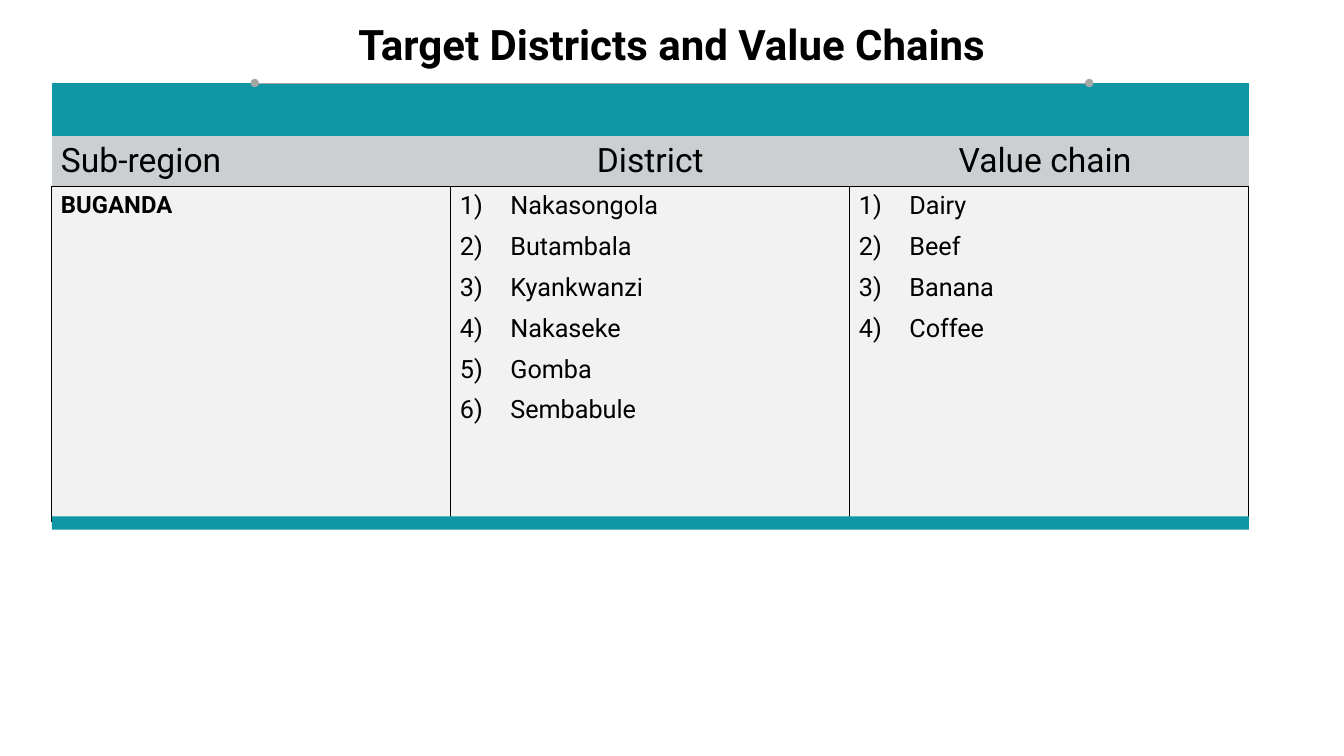
from pptx import Presentation
from pptx.dml.color import RGBColor
from pptx.enum.shapes import MSO_CONNECTOR as CONN, MSO_SHAPE as SHAPE
from pptx.enum.text import MSO_ANCHOR as ANCHOR, PP_ALIGN as ALIGN
from pptx.oxml.ns import qn
from pptx.util import Pt
from lxml.etree import SubElement

FONT = "Roboto"
BLACK, TEAL, SILVER, PALE, GREY = "000000", "0F97A6", "CCCFD1", "F2F2F2", "A6A6A6"
LEFT, TOP, COL_W = 37, 59.3, 285
ROW_HEIGHTS = (38, 36, 239)
HEADINGS = (
    ("Sub-region", ALIGN.LEFT),
    ("District", ALIGN.CENTER),
    ("Value chain ", ALIGN.CENTER),
)
DISTRICTS = ("Nakasongola", "Butambala", "Kyankwanzi", "Nakaseke", "Gomba", "Sembabule")
VALUE_CHAINS = ("Dairy", "Beef", "Banana", "Coffee")


def color(value):
    """Turn a hex string into a colour."""
    return RGBColor.from_string(value)


def write(p, text, size, bold=False, align=ALIGN.LEFT):
    """Put one formatted run in a paragraph."""
    p.alignment = align
    r = p.add_run()
    r.text = text
    for name, value in {"name": FONT, "size": Pt(size), "bold": bold}.items():
        setattr(r.font, name, value)
    r.font.color.rgb = color(BLACK)


def write_numbered(tf, items):
    """Fill a text frame with a numbered list."""
    for i, item in enumerate(items):
        p = tf.paragraphs[0] if i == 0 else tf.add_paragraph()
        write(p, item, 18)
        p.space_after = Pt(8)
        pPr = p._p.get_or_add_pPr()
        pPr.set("marL", str(Pt(36)))
        pPr.set("indent", str(-Pt(36)))
        SubElement(pPr, qn("a:buFont"), typeface="+mj-lt")
        SubElement(pPr, qn("a:buAutoNum"), type="arabicParenR")


def format_cell(cell, fill, lined_sides=""):
    """Set the margins, borders and fill of a cell."""
    margins = {"margin_left": 6.6, "margin_right": 6.6, "margin_top": 3.6, "margin_bottom": 3.6}
    for name, value in margins.items():
        setattr(cell, name, Pt(value))
    tcPr = cell._tc.get_or_add_tcPr()
    for side in "LRTB":
        ln = SubElement(tcPr, qn(f"a:ln{side}"), w=str(Pt(1)))
        if side in lined_sides:
            solid = SubElement(ln, qn("a:solidFill"))
            SubElement(solid, qn("a:srgbClr"), val=BLACK)
        else:
            SubElement(ln, qn("a:noFill"))
    cell.fill.solid()
    cell.fill.fore_color.rgb = color(fill)


def add_district_table(s):
    """Add the table of districts and value chains."""
    frame = s.shapes.add_table(3, 3, Pt(LEFT), Pt(TOP), Pt(3 * COL_W), Pt(sum(ROW_HEIGHTS)))
    table = frame.table
    for col in table.columns:
        col.width = Pt(COL_W)
    for row, height in zip(table.rows, ROW_HEIGHTS):
        row.height = Pt(height)
    for i, (heading, align) in enumerate(HEADINGS):
        format_cell(table.cell(0, i), TEAL)
        cell = table.cell(1, i)
        format_cell(cell, SILVER, "B")
        cell.vertical_anchor = ANCHOR.MIDDLE
        write(cell.text_frame.paragraphs[0], heading, 24, align=align)
        format_cell(table.cell(2, i), PALE, "LRTB")
    table.cell(0, 0).merge(table.cell(0, 2))
    write(table.cell(2, 0).text_frame.paragraphs[0], "BUGANDA", 17, True)
    write_numbered(table.cell(2, 1).text_frame, DISTRICTS)
    write_numbered(table.cell(2, 2).text_frame, VALUE_CHAINS)


def add_title(s, text):
    """Add the centred title across the slide."""
    tf = s.shapes.add_textbox(0, Pt(10), Pt(960), Pt(44)).text_frame
    tf.word_wrap = True
    write(tf.paragraphs[0], text, 30, True, ALIGN.CENTER)


def add_dotted_end_line(s, x1, x2, y):
    """Add a thin horizontal line with round ends."""
    line = s.shapes.add_connector(CONN.STRAIGHT, Pt(x1), Pt(y), Pt(x2), Pt(y))
    line.line.color.rgb = color(GREY)
    line.line.width = Pt(0.5)
    ln = line.line._get_or_add_ln()
    for end in ("headEnd", "tailEnd"):
        SubElement(ln, qn(f"a:{end}"), type="oval")
    SubElement(line._element.spPr, qn("a:effectLst"))


def add_bar(s, x, y, w, h, fill):
    """Add a plain filled rectangle."""
    sp = s.shapes.add_shape(SHAPE.RECTANGLE, Pt(x), Pt(y), Pt(w), Pt(h))
    sp.shadow.inherit = False
    sp.fill.solid()
    sp.fill.fore_color.rgb = color(fill)
    sp.line.fill.background()


def main():
    """Build and save the slide."""
    prs = Presentation()
    prs.slide_width, prs.slide_height = Pt(960), Pt(540)
    s = prs.slides.add_slide(prs.slide_layouts[6])
    add_district_table(s)
    add_title(s, "Target Districts and Value Chains")
    add_dotted_end_line(s, 182, 778, TOP)
    add_bar(s, LEFT, 368.8, 3 * COL_W, 9.5, TEAL)
    prs.save("out.pptx")


if __name__ == "__main__":
    main()
